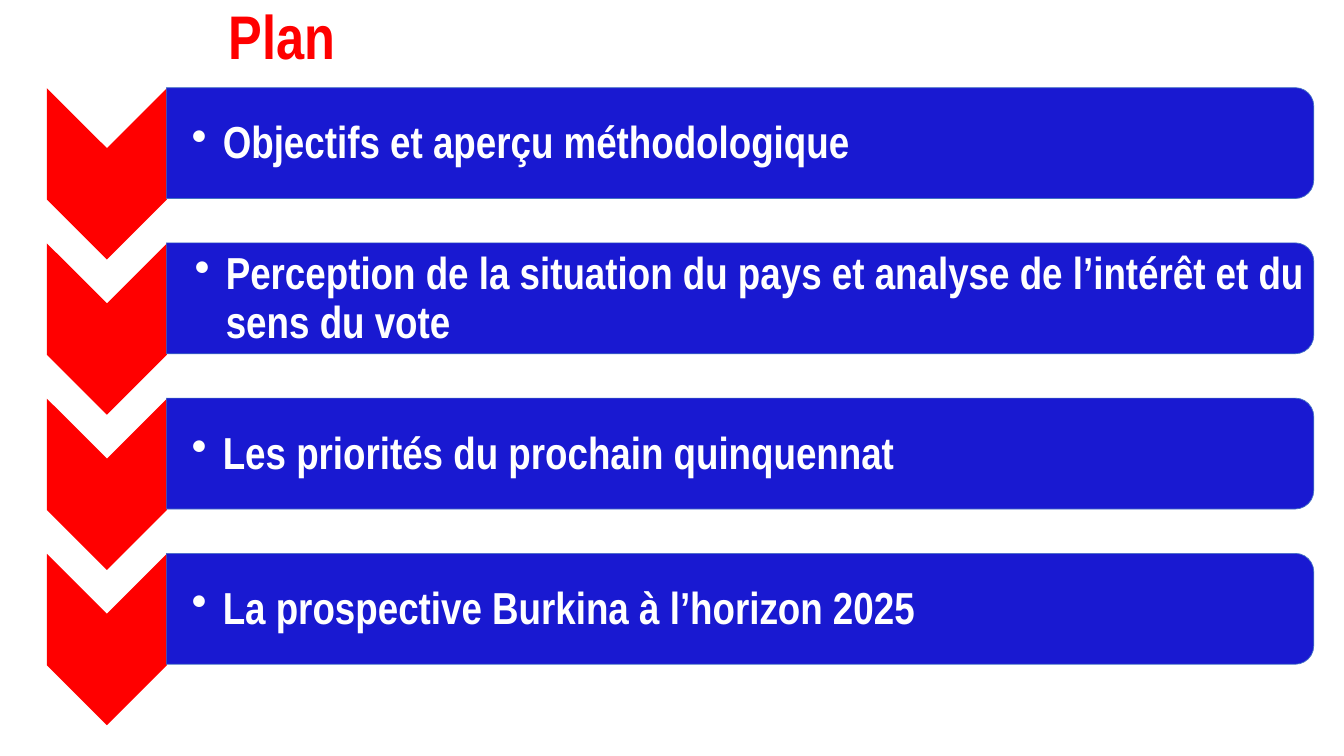
from dataclasses import dataclass

from lxml.etree import SubElement
from pptx import Presentation
from pptx.dml.color import RGBColor
from pptx.enum.shapes import MSO_SHAPE
from pptx.enum.text import MSO_ANCHOR
from pptx.oxml.ns import qn
from pptx.shapes.autoshape import Shape
from pptx.slide import Slide
from pptx.util import Pt

EMU_PER_PX = 9144
COLORS = {"red": "FF0000", "blue": "0000CC", "edge": "4472C4", "white": "FFFFFF"}
FONT = "Arial Narrow"
PITCH = 154
BULLET_INDENT = 31


@dataclass(frozen=True)
class Box:
    left: int
    top: int
    width: int
    height: int

    def shifted(self, down: int) -> "Box":
        return Box(self.left, self.top + down, self.width, self.height)

    def emu(self) -> list[int]:
        return [px(n) for n in (self.left, self.top, self.width, self.height)]


@dataclass(frozen=True)
class Section:
    wording: str
    inset: int = 25
    margin: int = 2


TITLE = Box(217, 0, 900, 78)
CHEVRON = Box(21, 113, 170, 119)
BAR = Box(679, -427, 110, 1138)
LABEL = Box(165, 93, 1133, 100)

SECTIONS = [
    Section("Objectifs et aperçu méthodologique"),
    Section(
        "Perception de la situation du pays et analyse de l’intérêt et du sens du vote",
        inset=28,
        margin=3,
    ),
    Section("Les priorités du prochain quinquennat"),
    Section("La prospective Burkina à l’horizon 2025"),
]


def px(length: int) -> int:
    return length * EMU_PER_PX


def apply_format(target: object, values: dict[str, object]) -> None:
    for name, value in values.items():
        setattr(target, name, value)


def add_rotated(slide: Slide, kind: MSO_SHAPE, box: Box, color: str) -> Shape:
    figure = slide.shapes.add_shape(kind, *box.emu())
    figure.rotation = 90
    figure.shadow.inherit = False
    figure.fill.solid()
    figure.fill.fore_color.rgb = RGBColor.from_string(COLORS[color])
    figure.line.fill.background()
    return figure


def add_bar(slide: Slide, box: Box) -> None:
    bar = add_rotated(slide, MSO_SHAPE.ROUND_2_SAME_RECTANGLE, box, "blue")
    bar.line.color.rgb = RGBColor.from_string(COLORS["edge"])
    bar.line.width = Pt(0.5)
    fill_color = bar.fill._xPr.find(qn("a:solidFill"))[0]
    SubElement(fill_color, qn("a:alpha"), val="90000")


def add_text(
    slide: Slide, box: Box, wording: str, size: int, color: str,
    margins: dict[str, int], bulleted: bool = False,
) -> None:
    frame = slide.shapes.add_textbox(*box.emu()).text_frame
    apply_format(frame, {
        "word_wrap": True,
        "vertical_anchor": MSO_ANCHOR.MIDDLE,
        **{f"margin_{side}": px(length) for side, length in margins.items()},
    })
    paragraph = frame.paragraphs[0]
    paragraph.line_spacing = 0.9
    run = paragraph.add_run()
    run.text = wording
    apply_format(run.font, {"name": FONT, "size": Pt(size), "bold": True})
    run.font.color.rgb = RGBColor.from_string(COLORS[color])
    if bulleted:
        paragraph.level = 1
        properties = paragraph._p.get_or_add_pPr()
        properties.set("marL", str(px(BULLET_INDENT)))
        properties.set("indent", str(-px(BULLET_INDENT)))
        SubElement(properties, qn("a:buChar"), char="•")


def add_section(slide: Slide, section: Section, down: int) -> None:
    add_rotated(slide, MSO_SHAPE.CHEVRON, CHEVRON.shifted(down), "red")
    add_bar(slide, BAR.shifted(down))
    margins = dict.fromkeys(("top", "right", "bottom"), section.margin)
    margins["left"] = section.inset
    add_text(slide, LABEL.shifted(down), section.wording, 32, "white", margins, True)


def main() -> None:
    deck = Presentation()
    apply_format(deck, {"slide_width": px(1333), "slide_height": px(750)})
    plan = deck.slides.add_slide(deck.slide_layouts[6])
    title_margins = {"left": 10, "right": 10, "top": 5, "bottom": 5}
    add_text(plan, TITLE, "Plan", 44, "red", title_margins)
    for position, section in enumerate(SECTIONS):
        add_section(plan, section, position * PITCH)
    deck.save("out.pptx")


if __name__ == "__main__":
    main()
